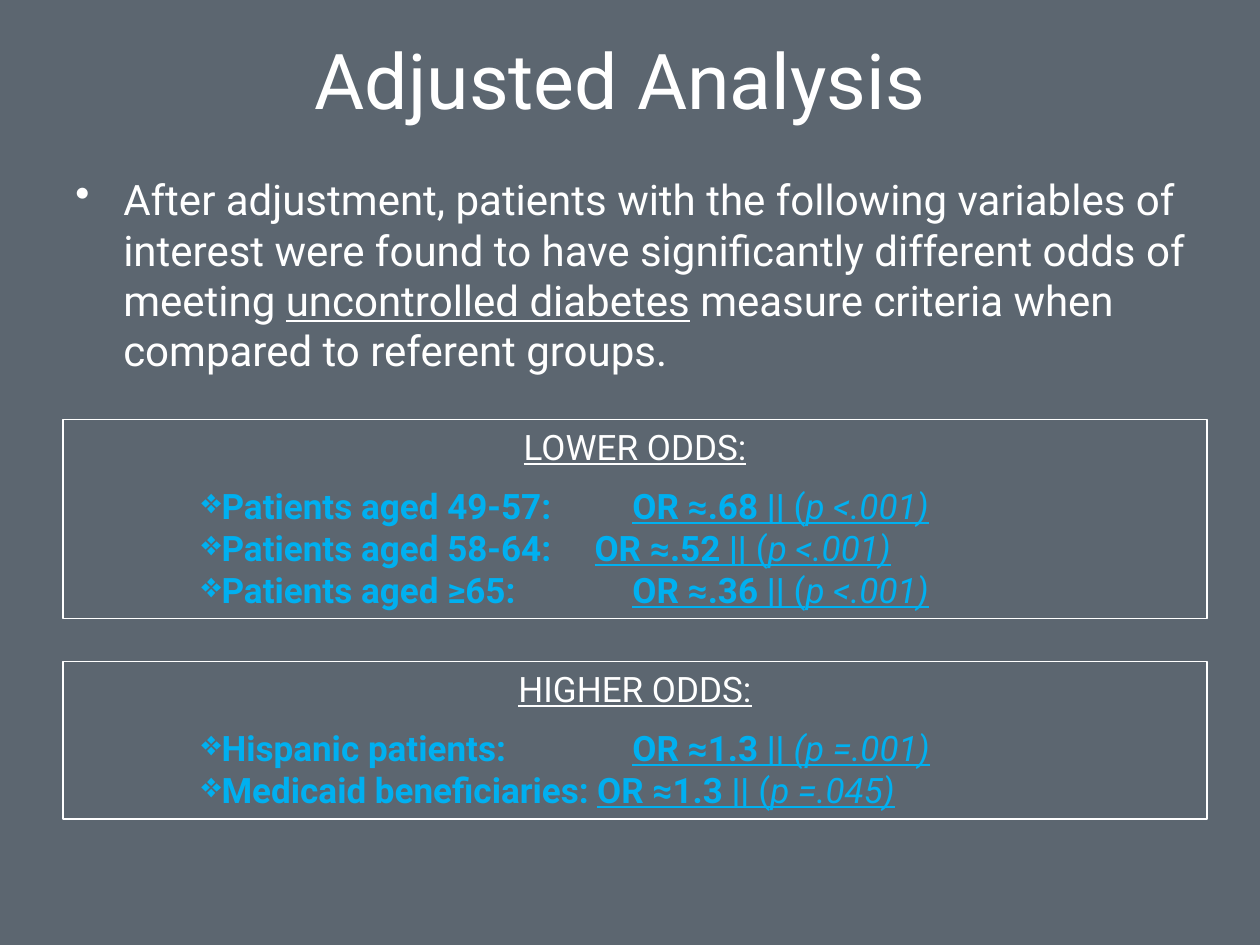
import pptx
import pptx.util
import pptx.dml.color
import pptx.enum.shapes
import pptx.enum.text
import pptx.oxml.ns
from lxml import etree

Inches = pptx.util.Inches
Pt = pptx.util.Pt
RGB = pptx.dml.color.RGBColor
Align = pptx.enum.text.PP_ALIGN
Anchor = pptx.enum.text.MSO_ANCHOR
qn = pptx.oxml.ns.qn

SLATE = RGB(0x5C, 0x66, 0x70)
WHITE = RGB(0xFF, 0xFF, 0xFF)
BLUE = RGB(0x00, 0xB0, 0xF0)
FONT = "Roboto"
LEFT, WIDTH = 0.5, 9.08

TITLE = "Adjusted Analysis "
INTRO = [
    ("After adjustment, patients with the following variables of interest were "
     "found to have significantly different odds of meeting ", ""),
    ("uncontrolled diabetes", "u"),
    (" measure criteria when compared to referent groups.", ""),
]
BOXES = [
    ("LOWER ODDS:", 3.33, 1.58, [
        ("Patients aged 49-57:", 4.42, "OR ≈.68 || ", "(", "p <.001)"),
        ("Patients aged 58-64:", 4.12, "OR ≈.52 || ", "(", "p <.001)"),
        ("Patients aged ≥65:", 4.42, "OR ≈.36 || ", "(", "p <.001)"),
    ]),
    ("HIGHER ODDS:", 5.25, 1.25, [
        ("Hispanic patients:", 4.42, "OR ≈1.3 || ", "", "(p =.001)"),
        ("Medicaid beneficiaries:", 4.14, "OR ≈1.3 || ", "(", "p =.045)"),
    ]),
]


def style(para, size, color, align=Align.LEFT):
    para.alignment = align
    font = para.font
    font.name, font.size, font.color.rgb = FONT, Pt(size), color


def add_runs(para, size, color, parts):
    style(para, size, color)
    for text, marks in parts:
        if text:
            run = para.add_run()
            run.text = text
            run.font.bold = "b" in marks
            run.font.italic = "i" in marks
            run.font.underline = "u" in marks


def bullet(para, sign, margin, indent, tab=None):
    props = para._p.get_or_add_pPr()
    props.set("marL", str(Inches(margin)))
    props.set("indent", str(Inches(indent)))
    mark = etree.Element(qn("a:buChar"), char=sign)
    nodes = [mark]
    if tab:
        tabs = etree.Element(qn("a:tabLst"))
        etree.SubElement(tabs, qn("a:tab"), pos=str(Inches(tab)), algn="l")
        nodes.append(tabs)
    spot = props.index(props.find(qn("a:defRPr")))
    props[spot:spot] = nodes


def add_text(slide, top, width, height, anchor):
    box = slide.shapes.add_textbox(
        Inches(LEFT), Inches(top), Inches(width), Inches(height))
    frame = box.text_frame
    frame.word_wrap = True
    frame.vertical_anchor = anchor
    return frame.paragraphs[0]


def add_box(slide, head, top, height, rows):
    box = slide.shapes.add_shape(
        pptx.enum.shapes.MSO_SHAPE.RECTANGLE,
        Inches(LEFT), Inches(top), Inches(WIDTH), Inches(height))
    box.shadow.inherit = False
    box.fill.background()
    box.line.color.rgb = WHITE
    box.line.width = Pt(0.75)
    frame = box.text_frame
    frame.word_wrap = True
    frame.vertical_anchor = Anchor.TOP
    para = frame.paragraphs[0]
    add_runs(para, 20, WHITE, [(head, "u")])
    para.alignment = Align.CENTER
    para.space_after = Pt(9.4)
    for label, tab, ratio, mark, value in rows:
        para = frame.add_paragraph()
        add_runs(para, 20, BLUE, [
            (label + "\t", "b"), (ratio, "bu"), (mark, "u"), (value, "iu")])
        bullet(para, "❖", 1, 0, tab)


def main():
    deck = pptx.Presentation()
    deck.slide_width, deck.slide_height = Inches(10), Inches(7.5)
    slide = deck.slides.add_slide(deck.slide_layouts[6])
    fill = slide.background.fill
    fill.solid()
    fill.fore_color.rgb = SLATE

    para = add_text(slide, 0, 9, 1.25, Anchor.MIDDLE)
    para.text = TITLE
    style(para, 44, WHITE, Align.CENTER)

    para = add_text(slide, 1.33, WIDTH, 5.83, Anchor.TOP)
    add_runs(para, 24, WHITE, INTRO)
    para.space_before = Pt(4.8)
    bullet(para, "•", 0.38, -0.38)

    for box in BOXES:
        add_box(slide, *box)
    deck.save("out.pptx")


if __name__ == "__main__":
    main()
